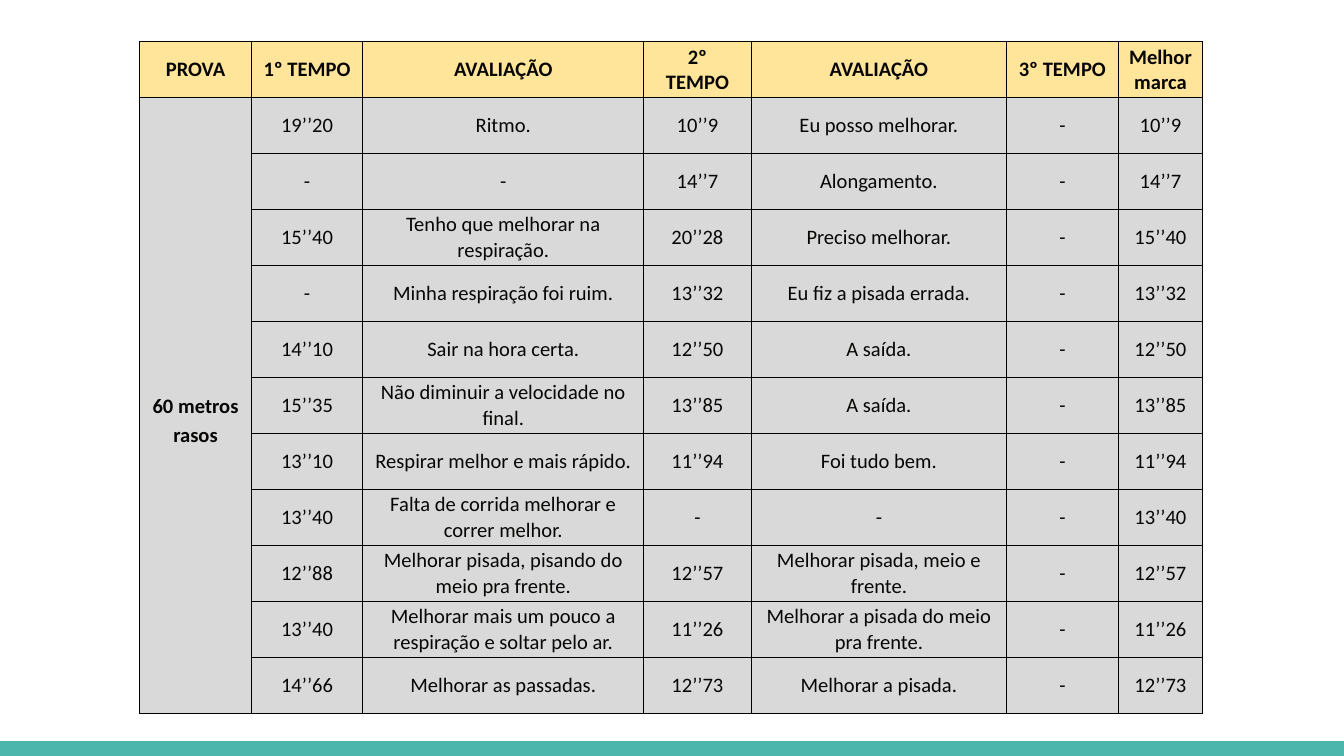
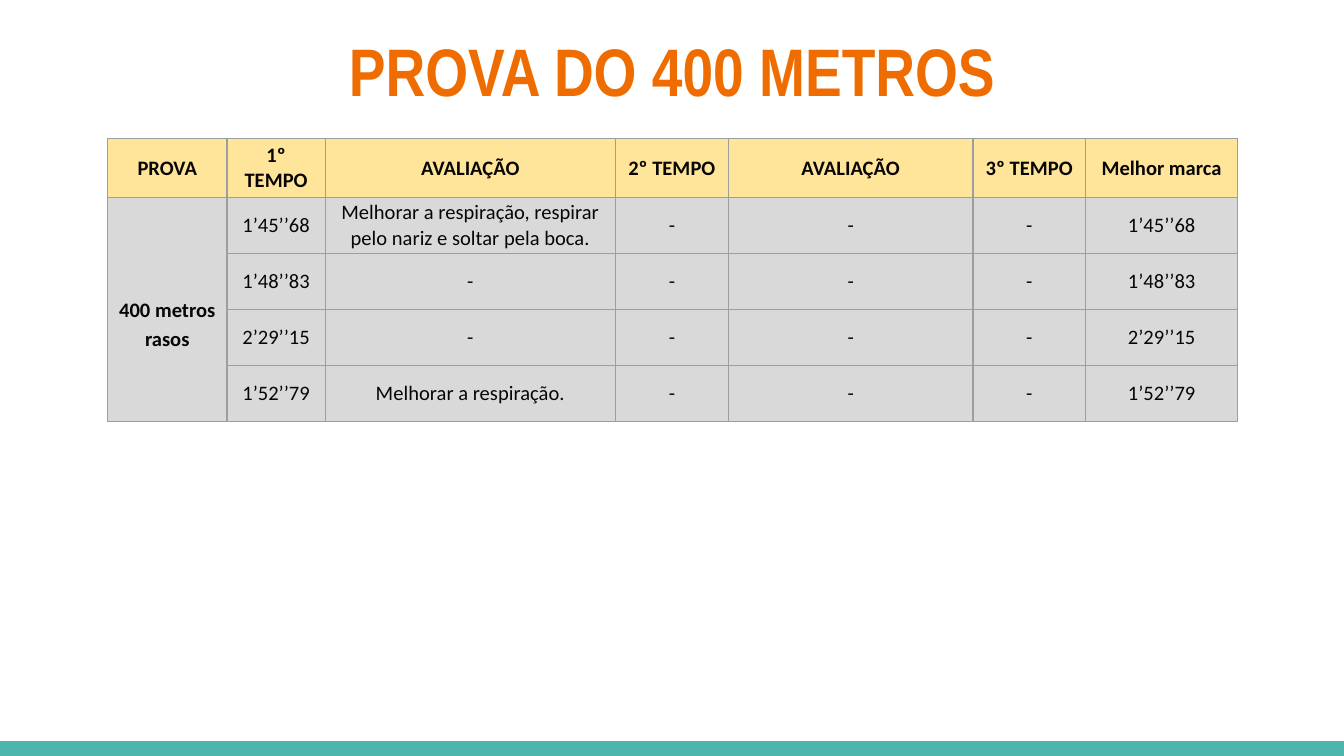
from dataclasses import dataclass

from lxml import etree
from pptx import Presentation
from pptx.dml.color import RGBColor
from pptx.enum.shapes import MSO_SHAPE
from pptx.enum.text import MSO_ANCHOR, MSO_AUTO_SIZE, PP_ALIGN
from pptx.oxml.ns import qn
from pptx.slide import Slide
from pptx.table import _Cell
from pptx.util import Inches, Pt

RECTANGLE = MSO_SHAPE.RECTANGLE
TOP, MIDDLE = MSO_ANCHOR.TOP, MSO_ANCHOR.MIDDLE
CENTER = PP_ALIGN.CENTER
NO_AUTOFIT = MSO_AUTO_SIZE.NONE

TEAL = RGBColor(0x4D, 0xB6, 0xAC)
ORANGE = RGBColor(0xEF, 0x6C, 0x00)
YELLOW = RGBColor(0xFF, 0xE5, 0x99)
LIGHT_GRAY = RGBColor(0xD9, 0xD9, 0xD9)
MID_GRAY = RGBColor(0x9E, 0x9E, 0x9E)
BLACK = RGBColor(0x00, 0x00, 0x00)
INK = RGBColor(0x07, 0x06, 0x05)

TITLE_FONT, TABLE_FONT = "Arial Narrow", "Calibri"
SLIDE_WIDTH, SLIDE_HEIGHT = Inches(10), Inches(10 * 9 / 16)
BAND_HEIGHT = Inches(0.11)
ROW_HEIGHT = 5 / 12
TITLE_ONLY_LAYOUT, BLANK_LAYOUT = 5, 6

HEADINGS = ("PROVA", "1º TEMPO", "AVALIAÇÃO", "2º TEMPO", "AVALIAÇÃO",
            "3º TEMPO", "Melhor marca")


@dataclass(frozen=True)
class RaceTable:
    event: str
    left: float
    top: float
    column_widths: tuple[float, ...]
    header_height: float
    border: RGBColor
    results: tuple[tuple[str, ...], ...]


SPRINT = RaceTable(
    event="60 metros rasos", left=1.04, top=0.31,
    column_widths=(0.83, 0.83, 2.09, 0.8, 1.9, 0.83, 0.63),
    header_height=ROW_HEIGHT, border=BLACK,
    results=(
        ("19’’20", "Ritmo.", "10’’9", "Eu posso melhorar.", "-", "10’’9"),
        ("-", "-", "14’’7", "Alongamento.", "-", "14’’7"),
        ("15’’40", "Tenho que melhorar na respiração.", "20’’28",
         "Preciso melhorar.", "-", "15’’40"),
        ("-", "Minha respiração foi ruim.", "13’’32",
         "Eu fiz a pisada errada.", "-", "13’’32"),
        ("14’’10", "Sair na hora certa.", "12’’50", "A saída.", "-", "12’’50"),
        ("15’’35", "Não diminuir a velocidade no final.", "13’’85",
         "A saída.", "-", "13’’85"),
        ("13’’10", "Respirar melhor e mais rápido.", "11’’94",
         "Foi tudo bem.", "-", "11’’94"),
        ("13’’40", "Falta de corrida melhorar e correr melhor.", "-",
         "-", "-", "13’’40"),
        ("12’’88", "Melhorar pisada, pisando do meio pra frente.", "12’’57",
         "Melhorar pisada, meio e frente.", "-", "12’’57"),
        ("13’’40", "Melhorar mais um pouco a respiração e soltar pelo ar.",
         "11’’26", "Melhorar a pisada do meio pra frente.", "-", "11’’26"),
        ("14’’66", "Melhorar as passadas.", "12’’73",
         "Melhorar a pisada.", "-", "12’’73"),
    ),
)

FOUR_HUNDRED = RaceTable(
    event="400 metros rasos", left=0.8, top=1.03,
    column_widths=(0.89, 0.73, 2.16, 0.84, 1.82, 0.84, 1.13),
    header_height=0.44, border=MID_GRAY,
    results=(
        ("1’45’’68",
         "Melhorar a respiração, respirar pelo nariz e soltar pela boca.",
         "-", "-", "-", "1’45’’68"),
        ("1’48’’83", "-", "-", "-", "-", "1’48’’83"),
        ("2’29’’15", "-", "-", "-", "-", "2’29’’15"),
        ("1’52’’79", "Melhorar a respiração.", "-", "-", "-", "1’52’’79"),
    ),
)


def add_band(slide: Slide) -> None:
    band = slide.shapes.add_shape(
        RECTANGLE, 0, SLIDE_HEIGHT - BAND_HEIGHT, SLIDE_WIDTH, BAND_HEIGHT)
    band.shadow.inherit = False
    band.fill.solid()
    band.fill.fore_color.rgb = TEAL
    band.line.fill.background()


def set_title(slide: Slide, text: str) -> None:
    title = slide.shapes.title
    title.left, title.top = Inches(0.34), Inches(0.12)
    title.width, title.height = Inches(9.32), Inches(0.77)
    frame = title.text_frame
    frame.auto_size = NO_AUTOFIT
    frame.word_wrap = True
    frame.vertical_anchor = TOP
    frame.margin_left = frame.margin_right = Inches(0.1)
    frame.margin_top = frame.margin_bottom = Inches(0.1)
    paragraph = frame.paragraphs[0]
    paragraph.alignment = CENTER
    run = paragraph.add_run()
    run.text = text
    run.font.name, run.font.size, run.font.bold = TITLE_FONT, Pt(36), True
    run.font.color.rgb = ORANGE


def style_cell(cell: _Cell, fill: RGBColor, border: RGBColor) -> None:
    cell.vertical_anchor = MIDDLE
    cell.margin_left = cell.margin_right = Inches(0.08)
    cell.margin_top = cell.margin_bottom = 0
    properties = cell._tc.get_or_add_tcPr()
    for side in ("a:lnL", "a:lnR", "a:lnT", "a:lnB"):
        line = etree.SubElement(properties, qn(side), w=str(Pt(0.75)))
        line_fill = etree.SubElement(line, qn("a:solidFill"))
        etree.SubElement(line_fill, qn("a:srgbClr"), val=str(border))
    cell.fill.solid()
    cell.fill.fore_color.rgb = fill


def write_cell(cell: _Cell, text: str, bold: bool) -> None:
    paragraph = cell.text_frame.paragraphs[0]
    paragraph.alignment = CENTER
    run = paragraph.add_run()
    run.text = text
    run.font.name, run.font.size, run.font.bold = TABLE_FONT, Pt(11), bold
    run.font.color.rgb = INK


def add_race_table(slide: Slide, race: RaceTable) -> None:
    row_heights = (race.header_height,) + (ROW_HEIGHT,) * len(race.results)
    table = slide.shapes.add_table(
        len(row_heights), len(HEADINGS), Inches(race.left), Inches(race.top),
        Inches(sum(race.column_widths)), Inches(sum(row_heights))).table
    table.first_row = table.horz_banding = False
    for column, width in zip(table.columns, race.column_widths):
        column.width = Inches(width)
    for row, height in zip(table.rows, row_heights):
        row.height = Inches(height)

    # Fills and borders
    for row_index, row in enumerate(table.rows):
        for cell in row.cells:
            style_cell(cell, LIGHT_GRAY if row_index else YELLOW, race.border)

    # Headings and results
    for column_index, heading in enumerate(HEADINGS):
        write_cell(table.cell(0, column_index), heading, bold=True)
    for row_index, result in enumerate(race.results, start=1):
        for column_index, value in enumerate(result, start=1):
            write_cell(table.cell(row_index, column_index), value, bold=False)

    # Event name, set half a line below the middle of its merged cell
    event_cell = table.cell(1, 0)
    event_cell.merge(table.cell(len(race.results), 0))
    write_cell(event_cell, race.event, bold=True)
    event_cell.text_frame.paragraphs[0].line_spacing = 1.15
    event_cell.margin_top = Inches(0.2)


def main() -> None:
    deck = Presentation()
    deck.slide_width, deck.slide_height = SLIDE_WIDTH, SLIDE_HEIGHT

    # 60 metres
    sprint_slide = deck.slides.add_slide(deck.slide_layouts[BLANK_LAYOUT])
    add_band(sprint_slide)
    add_race_table(sprint_slide, SPRINT)

    # 400 metres
    long_slide = deck.slides.add_slide(deck.slide_layouts[TITLE_ONLY_LAYOUT])
    add_band(long_slide)
    set_title(long_slide, "PROVA DO 400 METROS")
    add_race_table(long_slide, FOUR_HUNDRED)

    deck.save("out.pptx")


if __name__ == "__main__":
    main()
